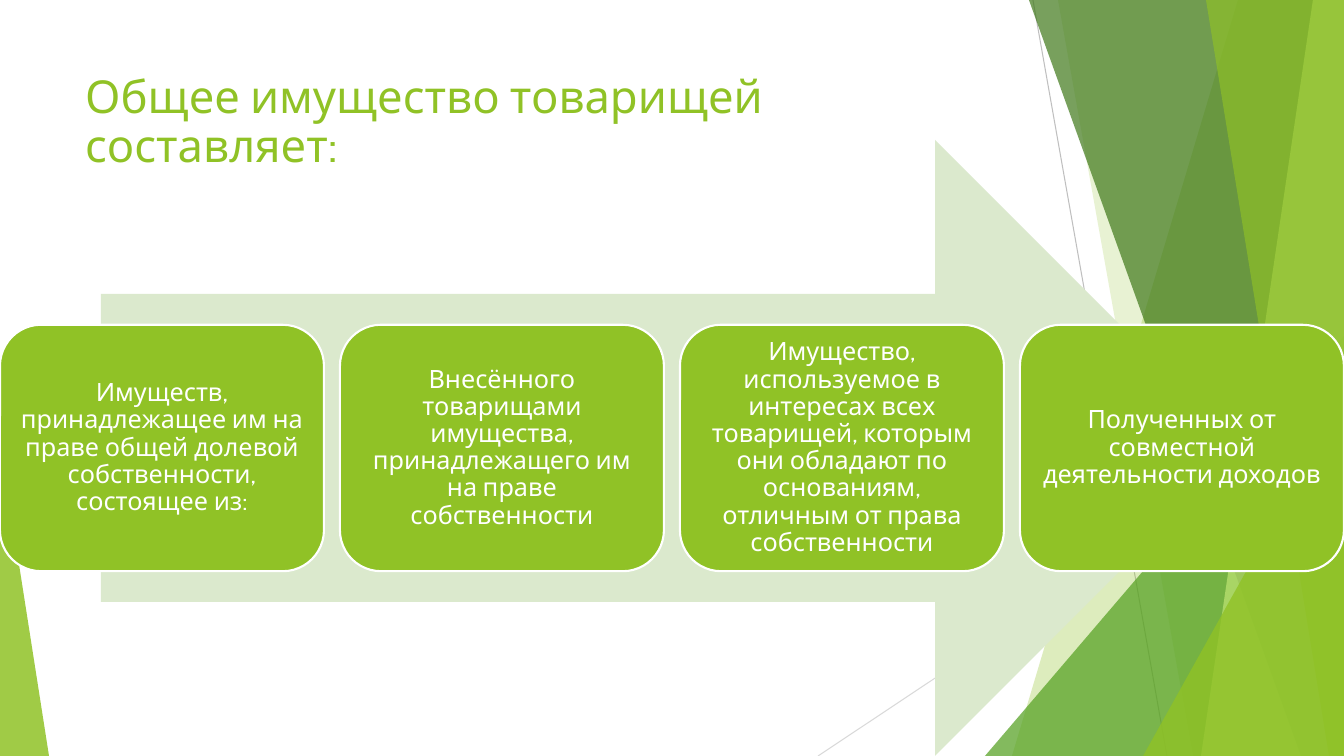
from lxml.etree import SubElement
from pptx import Presentation
from pptx.dml.color import RGBColor
from pptx.enum.shapes import MSO_CONNECTOR, MSO_SHAPE
from pptx.enum.text import MSO_ANCHOR, MSO_AUTO_SIZE, PP_ALIGN
from pptx.oxml.ns import qn
from pptx.util import Emu, Pt

WIDTH, HEIGHT = 1344, 756
SCALE = 914400 / 100.8
FONT = "Cabin"

WHITE = RGBColor(0xFF, 0xFF, 0xFF)
GREEN = RGBColor(0x90, 0xC2, 0x26)
MID_GREEN = RGBColor(0x54, 0xA0, 0x21)
DARK_GREEN = RGBColor(0x3F, 0x78, 0x19)
LIME = RGBColor(0xC0, 0xE4, 0x74)
PALE_GREEN = RGBColor(0xDB, 0xE9, 0xCD)
GRAY = RGBColor(0xBF, 0xBF, 0xBF)
LIGHT_GRAY = RGBColor(0xD9, 0xD9, 0xD9)

TITLE = "Общее имущество товарищей составляет:"
ITEMS = [
    "Имуществ, принадлежащее им на праве общей долевой собственности, состоящее из:",
    "Внесённого товарищами имущества, принадлежащего им на праве собственности",
    "Имущество, используемое в интересах всех товарищей, которым они обладают "
    "по основаниям, отличным от права собственности",
    "Полученных от совместной деятельности доходов",
]

THIN_LINES = [
    ((1033, 0), (1167, HEIGHT), GRAY),
    ((WIDTH, 406), (818, HEIGHT), LIGHT_GRAY),
]
BACK_BANDS = [(1238, 1012, GREEN, 30), (1058, 1193, GREEN, 20)]
FRONT_BANDS = [
    (1029, 1301, DARK_GREEN, 70),
    (1313, 1201, LIME, 70),
    (1206, 1329, GREEN, 65),
]
BACK_TRIANGLE = ((985, 336, 359, 420), 1, MID_GREEN, 72)
FRONT_TRIANGLES = [
    ((1143, 396, 201, 360), 1, GREEN, 80),
    ((0, 443, 49, 313), 0, GREEN, 85),
]


def px(value):
    return Emu(round(value * SCALE))


def set_format(target, values):
    for name, value in values.items():
        setattr(target, name, value)


def paint(shape, color, opacity=100):
    shape.shadow.inherit = False
    shape.fill.solid()
    shape.fill.fore_color.rgb = color
    shape.line.fill.background()
    if opacity < 100:
        tint = shape.fill._xPr.find(qn("a:solidFill"))[0]
        SubElement(tint, qn("a:alpha"), val=str(opacity * 1000))


def add_preset(slide, kind, box, color, opacity=100):
    shape = slide.shapes.add_shape(kind, *map(px, box))
    paint(shape, color, opacity)
    return shape


def add_thin_line(slide, start, end, color):
    line = slide.shapes.add_connector(
        MSO_CONNECTOR.STRAIGHT, *map(px, start + end))
    line.line.color.rgb = color
    line.line.width = Pt(0.75)
    SubElement(line._element.spPr, qn("a:effectLst"))


def add_band(slide, top_x, bottom_x, color, opacity):
    builder = slide.shapes.build_freeform(top_x, 0, scale=SCALE)
    builder.add_line_segments([(WIDTH, 0), (WIDTH, HEIGHT), (bottom_x, HEIGHT)])
    paint(builder.convert_to_shape(), color, opacity)


def add_triangle(slide, box, apex, color, opacity):
    triangle = add_preset(
        slide, MSO_SHAPE.ISOSCELES_TRIANGLE, box, color, opacity)
    triangle.adjustments[0] = apex


def add_facets(slide):
    for line in THIN_LINES:
        add_thin_line(slide, *line)
    for band in BACK_BANDS:
        add_band(slide, *band)
    add_triangle(slide, *BACK_TRIANGLE)
    for band in FRONT_BANDS:
        add_band(slide, *band)
    for triangle in FRONT_TRIANGLES:
        add_triangle(slide, *triangle)


def add_title(slide, left, top, width, height):
    title = slide.shapes.title
    set_format(title, {"left": px(left), "top": px(top),
                       "width": px(width), "height": px(height)})
    frame = title.text_frame
    frame.text = TITLE
    set_format(frame, {"word_wrap": True, "auto_size": MSO_AUTO_SIZE.NONE,
                       "vertical_anchor": MSO_ANCHOR.TOP,
                       "margin_top": px(7)})
    paragraph = frame.paragraphs[0]
    set_format(paragraph, {"alignment": PP_ALIGN.LEFT, "line_spacing": 0.9,
                           "space_before": Pt(0)})
    set_format(paragraph.font, {"name": FONT, "size": Pt(32.4)})
    paragraph.font.color.rgb = GREEN


def add_card(slide, text, box):
    card = add_preset(slide, MSO_SHAPE.ROUNDED_RECTANGLE, box, GREEN)
    card.line.color.rgb = WHITE
    card.line.width = Pt(1.5)
    frame = card.text_frame
    frame.text = text
    margins = dict.fromkeys(
        ("margin_left", "margin_top", "margin_right", "margin_bottom"), px(7))
    set_format(frame, {"word_wrap": True,
                       "vertical_anchor": MSO_ANCHOR.MIDDLE, **margins})
    paragraph = frame.paragraphs[0]
    set_format(paragraph, {"alignment": PP_ALIGN.CENTER, "line_spacing": 0.9})
    set_format(paragraph.font, {"name": FONT, "size": Pt(18)})
    paragraph.font.color.rgb = WHITE


def add_process(slide, left, top, width, height):
    arrow_left, card_gap = 101, 16
    add_preset(slide, MSO_SHAPE.RIGHT_ARROW,
               (left + arrow_left, top, width - 2 * arrow_left, height),
               PALE_GREEN)
    card_width = (width - card_gap * (len(ITEMS) - 1)) / len(ITEMS)
    card_height = height * 0.4
    card_top = top + (height - card_height) / 2
    for index, text in enumerate(ITEMS):
        card_left = left + index * (card_width + card_gap)
        add_card(slide, text, (card_left, card_top, card_width, card_height))


def main():
    presentation = Presentation()
    set_format(presentation, {"slide_width": px(WIDTH),
                              "slide_height": px(HEIGHT)})
    slide = presentation.slides.add_slide(presentation.slide_layouts[5])
    add_facets(slide)
    add_title(slide, 75, 67, 948, 145)
    add_process(slide, 0, 140, WIDTH, 616)
    presentation.save("out.pptx")


if __name__ == "__main__":
    main()
